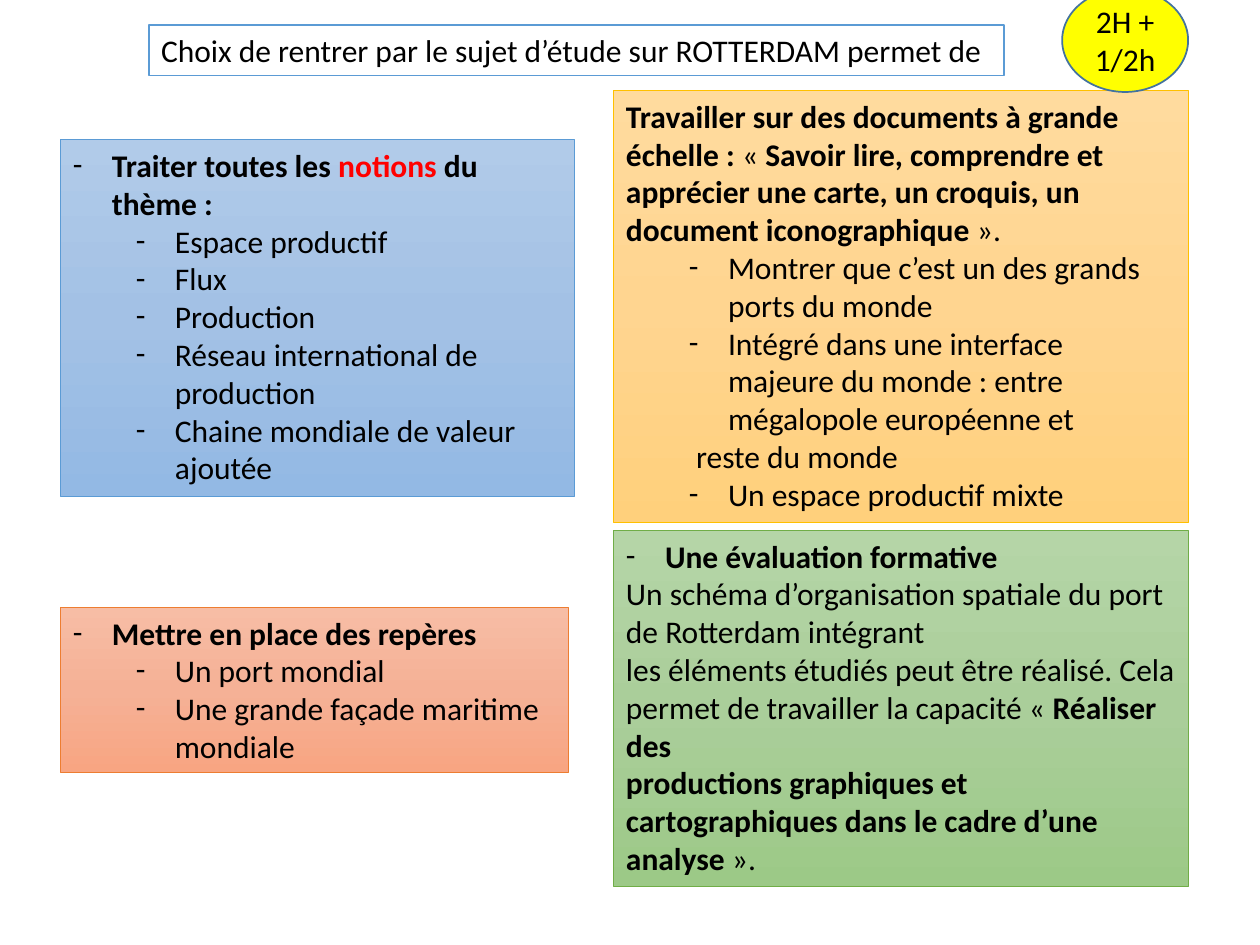
import copy

import pptx
import pptx.dml.color
import pptx.enum.shapes
import pptx.enum.text
import pptx.oxml
import pptx.oxml.ns
import pptx.util
from pptx.util import Inches

COLORS = {
    "text": "000000", "accent": "FF0000",
    "title": "FFFFFF", "title_line": "5B9BD5",
    "badge": "FFFF00", "badge_line": "43739E",
    "blue_line": "5B9BD5", "orange_line": "ED7D31",
    "gold_line": "FFC000", "green_line": "70AD47",
}
GRADIENTS = {
    "blue": ("B1CBE9", "A3C1E5", "93B9E4"),
    "orange": ("F7BDA5", "F5B196", "F8A582"),
    "gold": ("FFDB9E", "FFD590", "FFD07C"),
    "green": ("B5D5A7", "AACE9A", "9CC987"),
}
BASE_FONT = {"name": "Calibri", "size": pptx.util.Pt(18)}
HANGING = 0.31
LEVEL_INDENT = 0.5

# A paragraph is (style, runs); a run is (text, bold[, colour]).
NOTIONS = [
    ("bullet", [("Traiter toutes les ", True), ("notions", True, "accent"),
                (" du thème :", True)]),
    ("sub", [("Espace productif", False)]),
    ("sub", [("Flux", False)]),
    ("sub", [("Production", False)]),
    ("sub", [("Réseau international de production", False)]),
    ("sub", [("Chaine mondiale de valeur ajoutée", False)]),
]
LANDMARKS = [
    ("bullet", [("Mettre en place des repères", True)]),
    ("sub", [("Un port mondial", False)]),
    ("sub", [("Une grande façade maritime mondiale", False)]),
]
DOCUMENTS = [
    ("plain", [("Travailler sur des documents à grande échelle : ", True),
               ("« ", False),
               ("Savoir lire, comprendre et apprécier une carte, un croquis, "
                "un document iconographique ", True),
               ("».", False)]),
    ("sub", [("Montrer que c’est un des grands ports du monde", False)]),
    ("sub", [("Intégré dans une interface majeure du monde : entre "
              "mégalopole européenne et", False)]),
    ("continued", [(" reste du monde", False)]),
    ("sub", [("Un espace productif mixte", False)]),
]
ASSESSMENT = [
    ("bullet", [("Une évaluation formative", True)]),
    ("plain", [("Un schéma d’organisation spatiale du port de Rotterdam "
                "intégrant", False)]),
    ("plain", [("les éléments étudiés peut être réalisé. Cela permet de "
                "travailler la capacité « ", False), ("Réaliser des", True)]),
    ("plain", [("productions graphiques et cartographiques dans le cadre "
                "d’une analyse ", True), ("».", False)]),
]
PANELS = [
    ("blue", (0.48, 1.11, 4.08, 2.83), NOTIONS),
    ("orange", (0.48, 4.82, 4.03, 1.31), LANDMARKS),
    ("gold", (4.87, 0.72, 4.56, 3.43), DOCUMENTS),
    ("green", (4.87, 4.21, 4.56, 2.83), ASSESSMENT),
]
TITLE = [("plain", [("Choix de rentrer par le sujet d’étude sur ROTTERDAM "
                     "permet de", False)])]
DURATION = [("plain", [("2H + 1/2h ", False)])]


def rgb(hex_value):
    return pptx.dml.color.RGBColor.from_string(hex_value)


def apply(target, values):
    for attribute, value in values.items():
        setattr(target, attribute, value)


def add_outlined(slide, kind, box, line, width):
    shape = slide.shapes.add_shape(kind, *map(Inches, box))
    shape.shadow.inherit = False
    shape.line.color.rgb = rgb(COLORS[line])
    shape.line.width = pptx.util.Pt(width)
    return shape


def fill_solid(shape, color):
    shape.fill.solid()
    shape.fill.fore_color.rgb = rgb(COLORS[color])


def fill_gradient(shape, hex_stops):
    """Fill from top to bottom through three evenly spaced colours."""
    shape.fill.gradient()
    shape.fill.gradient_angle = 270
    first = shape._element.spPr.xpath(".//a:gs")[0]
    first.addnext(copy.deepcopy(first))
    for index, stop in enumerate(shape.fill.gradient_stops):
        stop.position = index / 2
        stop.color.rgb = rgb(hex_stops[index])


def set_indent(paragraph, style):
    """Set level, hanging indent and dash for a paragraph style."""
    if style == "plain":
        return
    paragraph.level = 0 if style == "bullet" else 1
    hanging = 0 if style == "continued" else HANGING
    properties = paragraph._p.get_or_add_pPr()
    properties.set("marL", str(Inches(paragraph.level * LEVEL_INDENT + hanging)))
    properties.set("indent", str(Inches(-hanging)))
    if hanging:
        namespace = pptx.oxml.ns.nsdecls("a")
        for tag in ('buFont {} typeface="Calibri"', 'buChar {} char="-"'):
            properties.append(pptx.oxml.parse_xml(f"<a:{tag.format(namespace)}/>"))


def write(shape, paragraphs, frame_format, align=pptx.enum.text.PP_ALIGN.LEFT):
    frame = shape.text_frame
    apply(frame, frame_format)
    for index, (style, runs) in enumerate(paragraphs):
        paragraph = frame.add_paragraph() if index else frame.paragraphs[0]
        set_indent(paragraph, style)
        paragraph.alignment = align
        for text, bold, *color in runs:
            run = paragraph.add_run()
            run.text = text
            apply(run.font, {**BASE_FONT, "bold": bold})
            run.font.color.rgb = rgb(COLORS[color[0] if color else "text"])


def main():
    deck = pptx.Presentation()
    apply(deck, {"slide_width": Inches(10), "slide_height": Inches(7.5)})
    slide = deck.slides.add_slide(deck.slide_layouts[6])
    shapes = pptx.enum.shapes.MSO_SHAPE
    anchor = pptx.enum.text.MSO_ANCHOR
    growing = {"word_wrap": True, "vertical_anchor": anchor.TOP,
               "auto_size": pptx.enum.text.MSO_AUTO_SIZE.SHAPE_TO_FIT_TEXT}

    for color, box, paragraphs in PANELS:
        panel = add_outlined(slide, shapes.RECTANGLE, box, f"{color}_line", 0.5)
        fill_gradient(panel, GRADIENTS[color])
        write(panel, paragraphs, growing)

    title = add_outlined(slide, shapes.RECTANGLE, (1.18, 0.2, 6.79, 0.4),
                         "title_line", 1)
    fill_solid(title, "title")
    write(title, TITLE, {**growing, "word_wrap": False})

    badge = add_outlined(slide, shapes.OVAL, (8.43, -0.09, 1, 0.82),
                         "badge_line", 1)
    fill_solid(badge, "badge")
    write(badge, DURATION, {"word_wrap": True, "vertical_anchor": anchor.MIDDLE},
          pptx.enum.text.PP_ALIGN.CENTER)

    deck.save("out.pptx")


if __name__ == "__main__":
    main()
